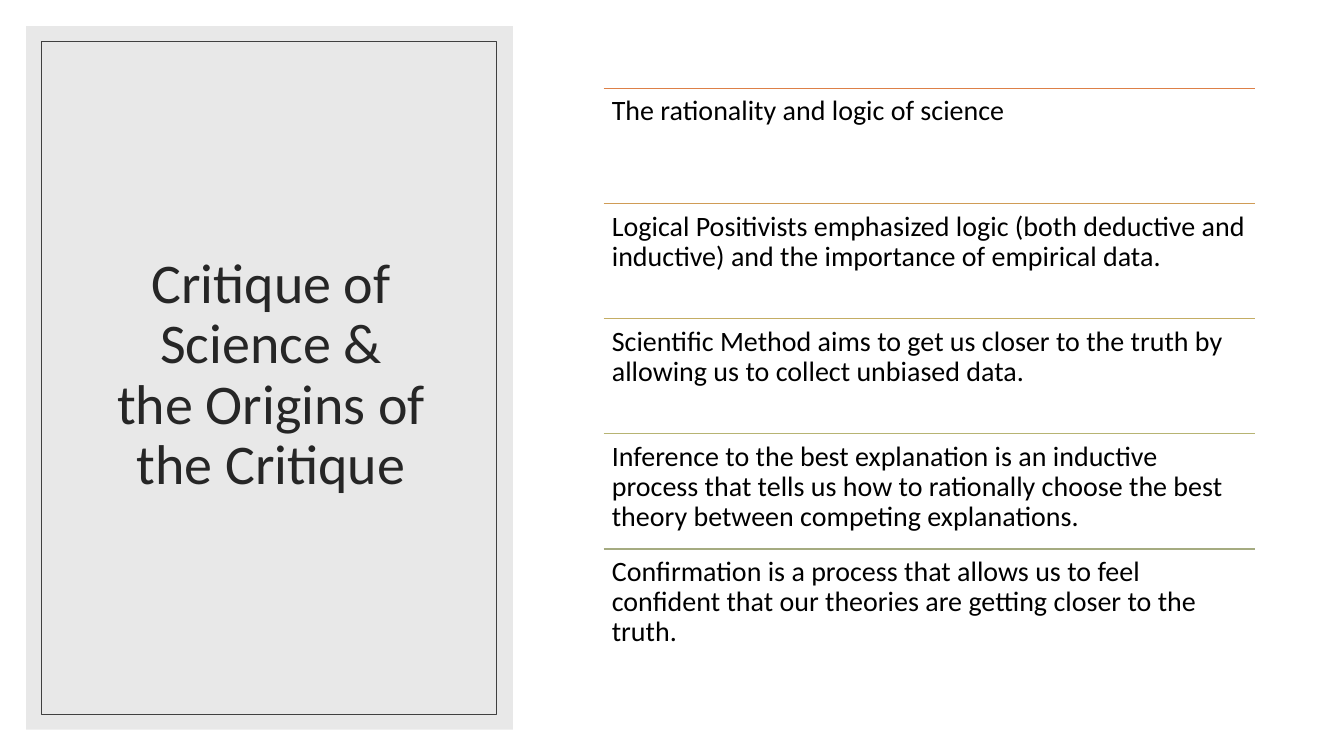
import dataclasses

import lxml.etree
import pptx
import pptx.dml.color
import pptx.enum.shapes
import pptx.enum.text
import pptx.oxml.ns
import pptx.util
from pptx.util import Cm


@dataclasses.dataclass(frozen=True)
class Theme:
    font: str = "Calibri"
    title_size: int = 40
    body_size: int = 20
    background: str = "FFFFFF"
    panel: str = "D9D9D9"
    panel_opacity: int = 60
    frame: str = "404040"
    title: str = "262626"
    body: str = "000000"
    rules: tuple = ("DD8047", "D09C56", "C4AD64", "B7B473", "A5AB81")


TITLE = "Critique of Science &\nthe Origins of the Critique"
POINTS = (
    "The rationality and logic of science",
    "Logical Positivists emphasized logic (both deductive and inductive) "
    "and the importance of empirical data.",
    "Scientific Method aims to get us closer to the truth by allowing us "
    "to collect unbiased data.",
    "Inference to the best explanation is an inductive process that tells us "
    "how to rationally choose the best theory between competing explanations.",
    "Confirmation is a process that allows us to feel confident that our "
    "theories are getting closer to the truth.",
)


def color(value):
    return pptx.dml.color.RGBColor.from_string(value)


def write_text(text_frame, text, *, font, size, fill, align="LEFT", space_after=0):
    paragraph = text_frame.paragraphs[0]
    paragraph.text = text
    paragraph.alignment = getattr(pptx.enum.text.PP_ALIGN, align)
    paragraph.line_spacing = 0.9
    paragraph.space_after = pptx.util.Pt(space_after)
    for run in paragraph.runs:
        run.font.name = font
        run.font.size = pptx.util.Pt(size)
        run.font.color.rgb = color(fill)


class SlideBuilder:
    def __init__(self, slide, theme):
        self.slide = slide
        self.theme = theme

    def rectangle(self, left, top, width, height, fill=None, opacity=100, line=None):
        shape = self.slide.shapes.add_shape(
            pptx.enum.shapes.MSO_SHAPE.RECTANGLE, left, top, width, height)
        shape.shadow.inherit = False
        if fill:
            shape.fill.solid()
            shape.fill.fore_color.rgb = color(fill)
        else:
            shape.fill.background()
        if opacity < 100:
            fill_color = shape.fill._xPr.find(".//" + pptx.oxml.ns.qn("a:srgbClr"))
            alpha = lxml.etree.SubElement(fill_color, pptx.oxml.ns.qn("a:alpha"))
            alpha.set("val", str(opacity * 1000))
        if line:
            shape.line.color.rgb = color(line)
            shape.line.width = pptx.util.Pt(0.5)
        else:
            shape.line.fill.background()

    def rule(self, left, top, width, line):
        connector = self.slide.shapes.add_connector(
            pptx.enum.shapes.MSO_CONNECTOR.STRAIGHT, left, top, left + width, top)
        connector.line.color.rgb = color(line)
        connector.line.width = pptx.util.Pt(1)
        lxml.etree.SubElement(
            connector._element.spPr, pptx.oxml.ns.qn("a:effectLst"))

    def text(self, left, top, width, height, text, *, anchor="TOP", inset=None, **style):
        text_frame = self.slide.shapes.add_textbox(left, top, width, height).text_frame
        text_frame.word_wrap = True
        text_frame.vertical_anchor = getattr(pptx.enum.text.MSO_ANCHOR, anchor)
        if inset is not None:
            text_frame.margin_left = text_frame.margin_right = inset
            text_frame.margin_top = text_frame.margin_bottom = inset
        write_text(text_frame, text, font=self.theme.font, **style)


def main():
    theme = Theme()
    presentation = pptx.Presentation()
    presentation.slide_width = Cm(33.87)
    presentation.slide_height = Cm(19.05)
    slide = presentation.slides.add_slide(presentation.slide_layouts[6])
    builder = SlideBuilder(slide, theme)

    # Background
    builder.rectangle(0, 0, presentation.slide_width, presentation.slide_height,
                      fill=theme.background)

    # Title panel with its inner frame
    builder.rectangle(Cm(0.66), Cm(0.66), Cm(12.27), Cm(17.73),
                      fill=theme.panel, opacity=theme.panel_opacity)
    builder.text(Cm(1.6), Cm(1.55), Cm(10.46), Cm(15.85), TITLE, anchor="MIDDLE",
                 size=theme.title_size, fill=theme.title, align="CENTER")
    builder.rectangle(Cm(1.04), Cm(1.04), Cm(11.46), Cm(16.97), line=theme.frame)

    # Points, each under its coloured rule
    left, first_top, width, pitch = Cm(15.21), Cm(2.23), Cm(16.41), Cm(2.9)
    for index, (point, rule_color) in enumerate(zip(POINTS, theme.rules)):
        top = first_top + index * pitch
        builder.rule(left, top, width, rule_color)
        builder.text(left, top, width, pitch, point, inset=Cm(0.21),
                     size=theme.body_size, fill=theme.body, space_after=7)

    presentation.save("out.pptx")


if __name__ == "__main__":
    main()
